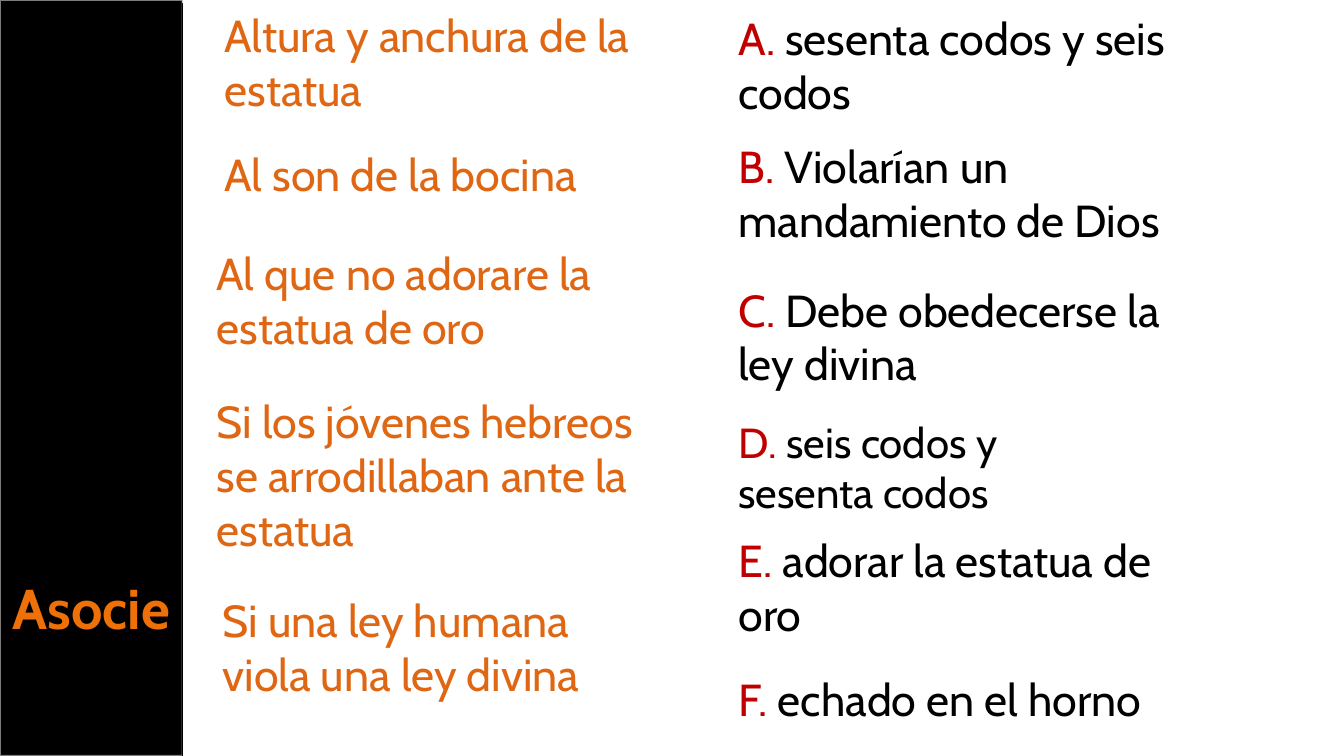
from dataclasses import dataclass

from lxml import etree
from pptx import Presentation
from pptx.dml.color import RGBColor
from pptx.enum.shapes import MSO_CONNECTOR, MSO_SHAPE
from pptx.enum.text import MSO_ANCHOR, MSO_AUTO_SIZE, PP_ALIGN
from pptx.oxml.ns import qn
from pptx.slide import Slide
from pptx.util import Cm, Pt

RECTANGLE = MSO_SHAPE.RECTANGLE
STRAIGHT = MSO_CONNECTOR.STRAIGHT
TOP = MSO_ANCHOR.TOP
CENTER = PP_ALIGN.CENTER
NO_AUTOFIT = MSO_AUTO_SIZE.NONE
GROW = MSO_AUTO_SIZE.SHAPE_TO_FIT_TEXT
TITLE_ONLY = 5

SLIDE_WIDTH, SLIDE_HEIGHT = 33.87, 19.05
BAND_WIDTH = 4.6
ANSWER_LEFT = 18.36


@dataclass(frozen=True)
class Theme:
    font: str = "Cabin"
    title_size: float = 40
    text_size: float = 32
    small_size: float = 30
    title: RGBColor = RGBColor(0xEE, 0x70, 0x08)
    prompt: RGBColor = RGBColor(0xDF, 0x66, 0x13)
    letter: RGBColor = RGBColor(0xC0, 0x00, 0x00)
    black: RGBColor = RGBColor(0x00, 0x00, 0x00)
    band_line: RGBColor = RGBColor(0xF9, 0xF9, 0xF9)


THEME = Theme()


@dataclass(frozen=True)
class Entry:
    """A prompt, or an answer when it has a letter; lengths in centimetres."""
    text: str
    left: float
    top: float
    width: float
    height: float = 3.0
    letter: str = ""
    size: float = THEME.text_size


PROMPTS = [
    Entry("Altura y anchura de la estatua", 5.41, 0.08, 11.66),
    Entry("Al son de la bocina", 5.41, 3.58, 9.75, 1.63),
    Entry("Al que no adorare la estatua de oro", 5.21, 6.07, 10.49),
    Entry("Si los jóvenes hebreos se arrodillaban ante la estatua",
          5.21, 9.8, 11.15, 4.37),
    Entry("Si una ley humana viola una ley divina", 5.36, 14.81, 10.82),
]

ANSWERS = [
    Entry("sesenta codos y seis codos", ANSWER_LEFT, 0.15, 14.0, letter="A"),
    Entry("Violarían un mandamiento de Dios", ANSWER_LEFT, 3.38, 12.5, letter="B"),
    Entry("Debe obedecerse la ley divina", ANSWER_LEFT, 6.99, 11.94, letter="C"),
    Entry("seis codos y sesenta codos", ANSWER_LEFT, 10.36, 10.62, 2.82,
          letter="D", size=THEME.small_size),
    Entry("adorar la estatua de oro", ANSWER_LEFT, 13.31, 11.51, letter="E"),
    Entry("echado en el horno", ANSWER_LEFT, 16.81, 14.2, 1.63, letter="F"),
]


def add_entry(slide: Slide, entry: Entry) -> None:
    box = slide.shapes.add_textbox(
        Cm(entry.left), Cm(entry.top), Cm(entry.width), Cm(entry.height))
    frame = box.text_frame
    frame.word_wrap = True
    frame.auto_size = GROW
    paragraph = frame.paragraphs[0]
    paragraph.font.name = THEME.font
    paragraph.font.size = Pt(entry.size)
    if entry.letter:
        letter = paragraph.add_run()
        letter.text = f"{entry.letter}. "
        letter.font.color.rgb = THEME.letter
    wording = paragraph.add_run()
    wording.text = entry.text
    wording.font.color.rgb = THEME.black if entry.letter else THEME.prompt


def add_title(slide: Slide) -> None:
    title = slide.shapes.title
    title.left, title.top = Cm(0), Cm(14.33)
    title.width, title.height = Cm(BAND_WIDTH), Cm(1.96)
    frame = title.text_frame
    frame.text = "Asocie"
    frame.word_wrap = True
    frame.auto_size = NO_AUTOFIT
    frame.vertical_anchor = TOP
    paragraph = frame.paragraphs[0]
    paragraph.alignment = CENTER
    paragraph.font.name = THEME.font
    paragraph.font.size = Pt(THEME.title_size)
    paragraph.font.bold = True
    paragraph.font.color.rgb = THEME.title


def add_band(slide: Slide) -> None:
    """Add the black side band behind the title, with a half-transparent edge."""
    band = slide.shapes.add_shape(
        RECTANGLE, Cm(0), Cm(0), Cm(BAND_WIDTH), Cm(SLIDE_HEIGHT))
    band.shadow.inherit = False
    band.fill.solid()
    band.fill.fore_color.rgb = THEME.black
    band.line.width = Pt(1.35)
    band.line.color.rgb = THEME.band_line
    edge_color = band.element.spPr.find(f"{qn('a:ln')}/{qn('a:solidFill')}")[0]
    etree.SubElement(edge_color, qn("a:alpha"), val="50000")
    slide.shapes.title.element.addprevious(band.element)


def add_divider(slide: Slide) -> None:
    divider = slide.shapes.add_connector(
        STRAIGHT, Cm(BAND_WIDTH), Cm(0.08), Cm(BAND_WIDTH), Cm(SLIDE_HEIGHT))
    divider.line.width = Pt(0.85)
    divider.line.color.rgb = THEME.black
    etree.SubElement(divider.element.spPr, qn("a:effectLst"))


def main() -> None:
    presentation = Presentation()
    presentation.slide_width = Cm(SLIDE_WIDTH)
    presentation.slide_height = Cm(SLIDE_HEIGHT)
    slide = presentation.slides.add_slide(presentation.slide_layouts[TITLE_ONLY])
    add_title(slide)
    add_band(slide)
    for entry in PROMPTS + ANSWERS:
        add_entry(slide, entry)
    add_divider(slide)
    presentation.save("out.pptx")


if __name__ == "__main__":
    main()
